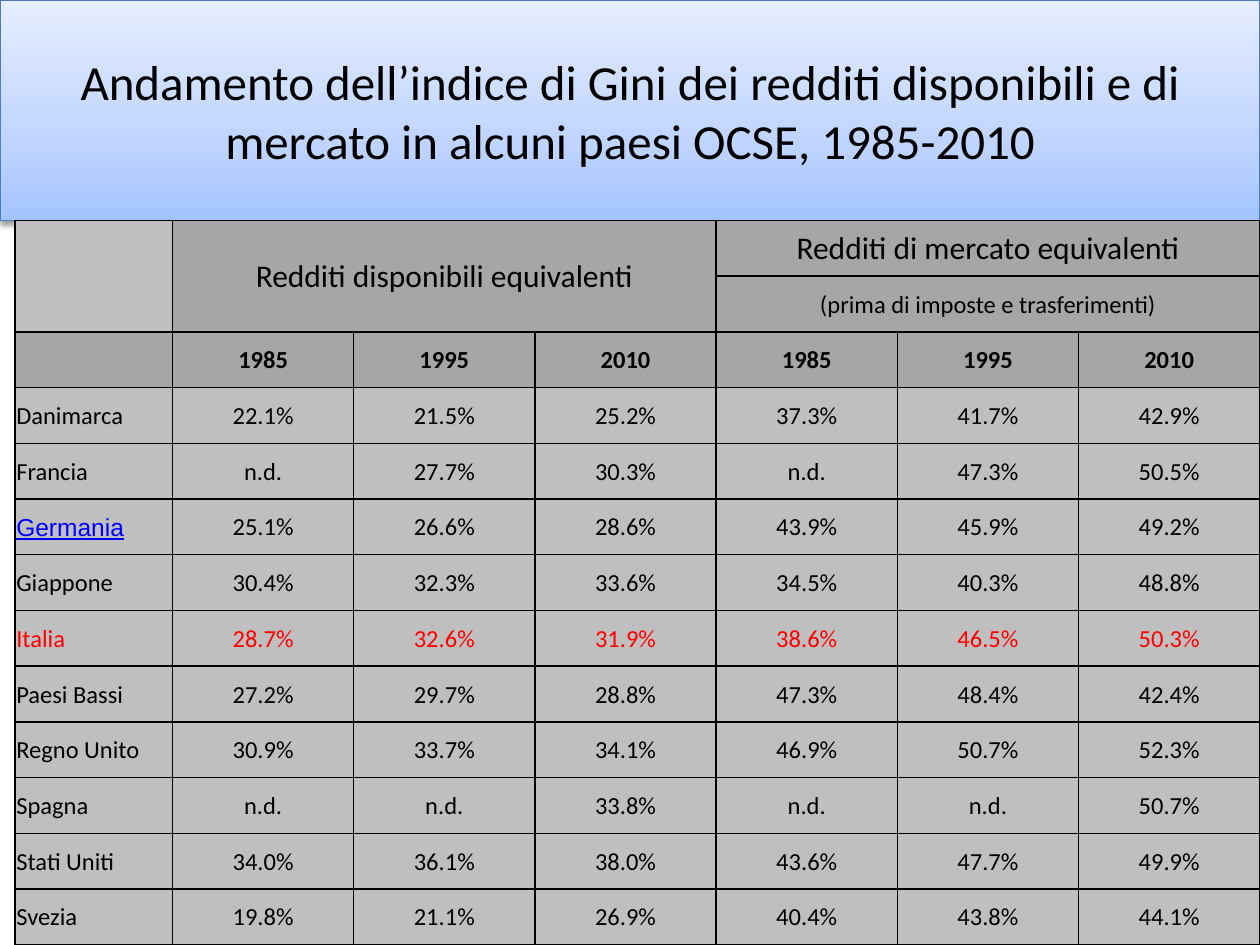
from copy import deepcopy

from lxml.etree import SubElement
from pptx import Presentation
from pptx.dml.color import RGBColor
from pptx.enum.text import MSO_ANCHOR as Anchor, PP_ALIGN as Align
from pptx.oxml import parse_xml
from pptx.oxml.ns import nsdecls, qn
from pptx.util import Pt

BLACK = RGBColor(0x00, 0x00, 0x00)
RED = RGBColor(0xFF, 0x00, 0x00)
LINK_BLUE = RGBColor(0x00, 0x00, 0xFF)
OUTLINE = RGBColor(0x4B, 0x7E, 0xBC)
HEADER_GREY = RGBColor(0xA6, 0xA6, 0xA6)
BODY_GREY = RGBColor(0xBF, 0xBF, 0xBF)
TITLE_STOPS = [
    (0, RGBColor(0xA4, 0xC4, 0xFF)),
    (0.35, RGBColor(0xBF, 0xD4, 0xFF)),
    (1, RGBColor(0xE6, 0xEE, 0xFF)),
]

SLIDE_W, SLIDE_H = 720, 540
TITLE_H = 126
TABLE_LEFT = 8.6
COUNTRY_W = 90

TITLE = ("Andamento dell’indice di Gini dei redditi disponibili e di "
         "mercato in alcuni paesi OCSE, 1985-2010")
YEARS = ["1985", "1995", "2010"]
GINI = [
    ("Danimarca", "22.1%", "21.5%", "25.2%", "37.3%", "41.7%", "42.9%"),
    ("Francia", "n.d.", "27.7%", "30.3%", "n.d.", "47.3%", "50.5%"),
    ("Germania", "25.1%", "26.6%", "28.6%", "43.9%", "45.9%", "49.2%"),
    ("Giappone", "30.4%", "32.3%", "33.6%", "34.5%", "40.3%", "48.8%"),
    ("Italia", "28.7%", "32.6%", "31.9%", "38.6%", "46.5%", "50.3%"),
    ("Paesi Bassi", "27.2%", "29.7%", "28.8%", "47.3%", "48.4%", "42.4%"),
    ("Regno Unito", "30.9%", "33.7%", "34.1%", "46.9%", "50.7%", "52.3%"),
    ("Spagna", "n.d.", "n.d.", "33.8%", "n.d.", "n.d.", "50.7%"),
    ("Stati Uniti", "34.0%", "36.1%", "38.0%", "43.6%", "47.7%", "49.9%"),
    ("Svezia", "19.8%", "21.1%", "26.9%", "40.4%", "43.8%", "44.1%"),
]


class SlideBuilder:
    """Holds the text style and the slide being filled."""

    def __init__(self, slide, font="Calibri", size=14):
        self.slide = slide
        self.font = font
        self.size = size

    def set_text(self, tf, text, size=None, color=BLACK, align=Align.CENTER,
                 bold=False, font=None):
        tf.text = text
        p = tf.paragraphs[0]
        p.alignment = align
        p.font.name = font or self.font
        p.font.size = Pt(size or self.size)
        p.font.bold = bold
        p.font.color.rgb = color
        return p

    def title(self, text, width, height):
        sp = self.slide.shapes.title
        sp.left, sp.top, sp.width, sp.height = 0, 0, Pt(width), Pt(height)
        sp.fill.gradient()
        sp.fill.gradient_angle = 90
        spPr = sp._element.spPr
        stop_list = spPr.find(".//" + qn("a:gsLst"))
        stop_list.insert(1, deepcopy(stop_list[0]))
        for stop, (position, color) in zip(sp.fill.gradient_stops, TITLE_STOPS):
            stop.position = position
            stop.color.rgb = color
        sp.line.color.rgb = OUTLINE
        sp.line.width = Pt(0.75)
        spPr.append(parse_xml(
            f'<a:effectLst {nsdecls("a")}><a:outerShdw blurRad="{Pt(3.1)}" '
            f'dist="{Pt(1.6)}" dir="5400000" rotWithShape="0">'
            '<a:srgbClr val="000000"><a:alpha val="38000"/></a:srgbClr>'
            '</a:outerShdw></a:effectLst>'))
        sp.text_frame.vertical_anchor = Anchor.MIDDLE
        self.set_text(sp.text_frame, text, size=28)

    def table(self, rows, cols, left, top, width, height, first_col):
        """Add a plain table whose columns after the first are equal."""
        table = self.slide.shapes.add_table(
            rows, cols, Pt(left), Pt(top), Pt(width), Pt(height)).table
        table.first_row = table.horz_banding = False
        for i, col in enumerate(table.columns):
            col.width = Pt((width - first_col) / (cols - 1) if i else first_col)
        for row in table.rows:
            row.height = Pt(height / rows)
        return table

    def style_cell(self, cell, fill):
        cell.margin_left = cell.margin_right = cell.margin_top = Pt(0.72)
        cell.margin_bottom = 0
        cell.vertical_anchor = Anchor.MIDDLE
        cell.fill.solid()
        cell.fill.fore_color.rgb = fill
        tcPr = cell._tc.get_or_add_tcPr()
        for i, side in enumerate(("lnL", "lnR", "lnT", "lnB")):
            ln = SubElement(tcPr, qn(f"a:{side}"), w=str(Pt(1)))
            solid = SubElement(ln, qn("a:solidFill"))
            SubElement(solid, qn("a:srgbClr"), val=str(BLACK))
            tcPr.insert(i, ln)


def add_gini_table(builder):
    header_rows = 3
    table = builder.table(header_rows + len(GINI), 1 + 2 * len(YEARS),
                          TABLE_LEFT, TITLE_H, SLIDE_W - TABLE_LEFT,
                          SLIDE_H - TITLE_H, COUNTRY_W)
    for r in range(len(table.rows)):
        for c in range(len(table.columns)):
            is_header = r == 2 or (r < 2 and c > 0)
            builder.style_cell(table.cell(r, c),
                               HEADER_GREY if is_header else BODY_GREY)

    for start, end in (((0, 0), (1, 0)), ((0, 1), (1, 3)),
                       ((0, 4), (0, 6)), ((1, 4), (1, 6))):
        table.cell(*start).merge(table.cell(*end))

    for r, c, text, size in ((0, 1, "Redditi disponibili equivalenti", 18),
                             (0, 4, "Redditi di mercato equivalenti", 18),
                             (1, 4, "(prima di imposte e trasferimenti)", 14)):
        builder.set_text(table.cell(r, c).text_frame, text, size=size)
    for c, year in enumerate(YEARS * 2, 1):
        builder.set_text(table.cell(2, c).text_frame, year, bold=True)

    for r, (country, *values) in enumerate(GINI, header_rows):
        color = RED if country == "Italia" else BLACK
        is_link = country == "Germania"
        p = builder.set_text(table.cell(r, 0).text_frame, country,
                             color=LINK_BLUE if is_link else color,
                             align=Align.LEFT,
                             font="Arial" if is_link else None)
        if is_link:
            p.font.underline = True
        for c, value in enumerate(values, 1):
            builder.set_text(table.cell(r, c).text_frame, value, color=color)


def main():
    prs = Presentation()
    prs.slide_width, prs.slide_height = Pt(SLIDE_W), Pt(SLIDE_H)
    title_only = prs.slide_layouts[5]
    builder = SlideBuilder(prs.slides.add_slide(title_only))
    builder.title(TITLE, SLIDE_W, TITLE_H)
    add_gini_table(builder)
    prs.save("out.pptx")


if __name__ == "__main__":
    main()
